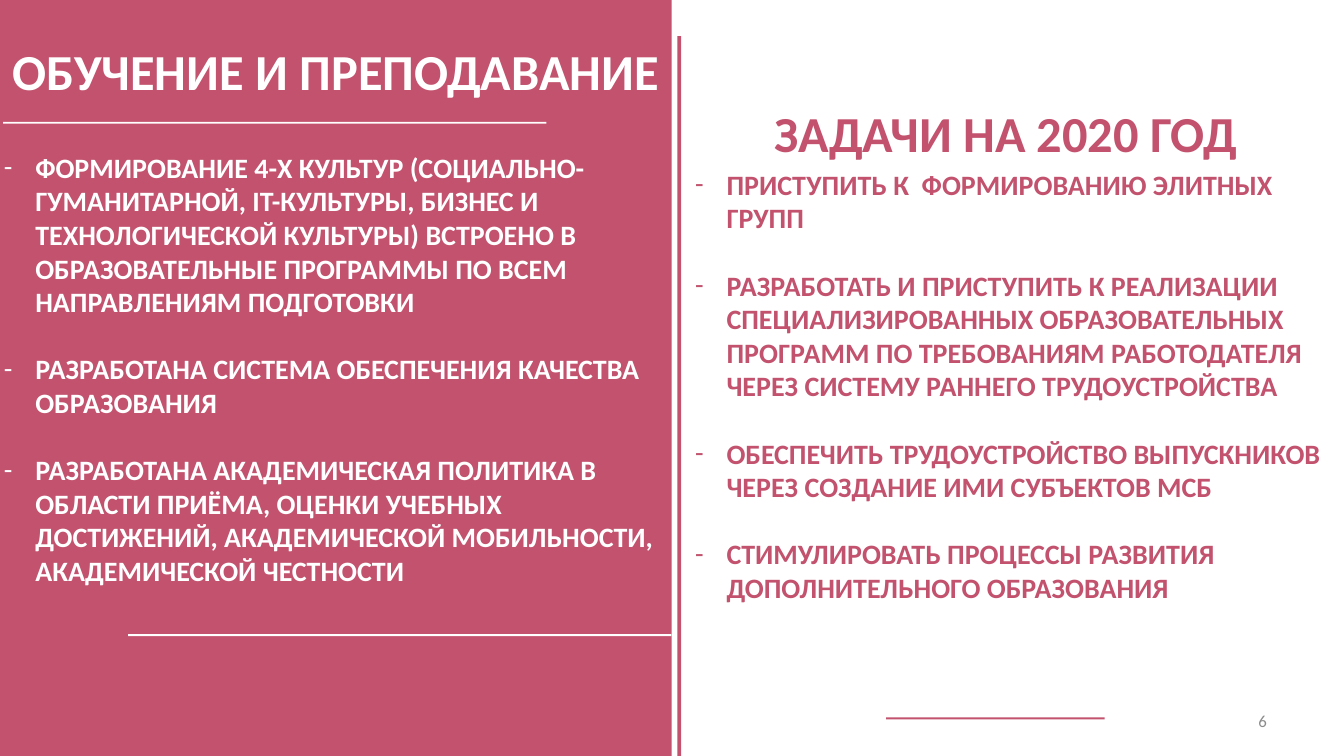
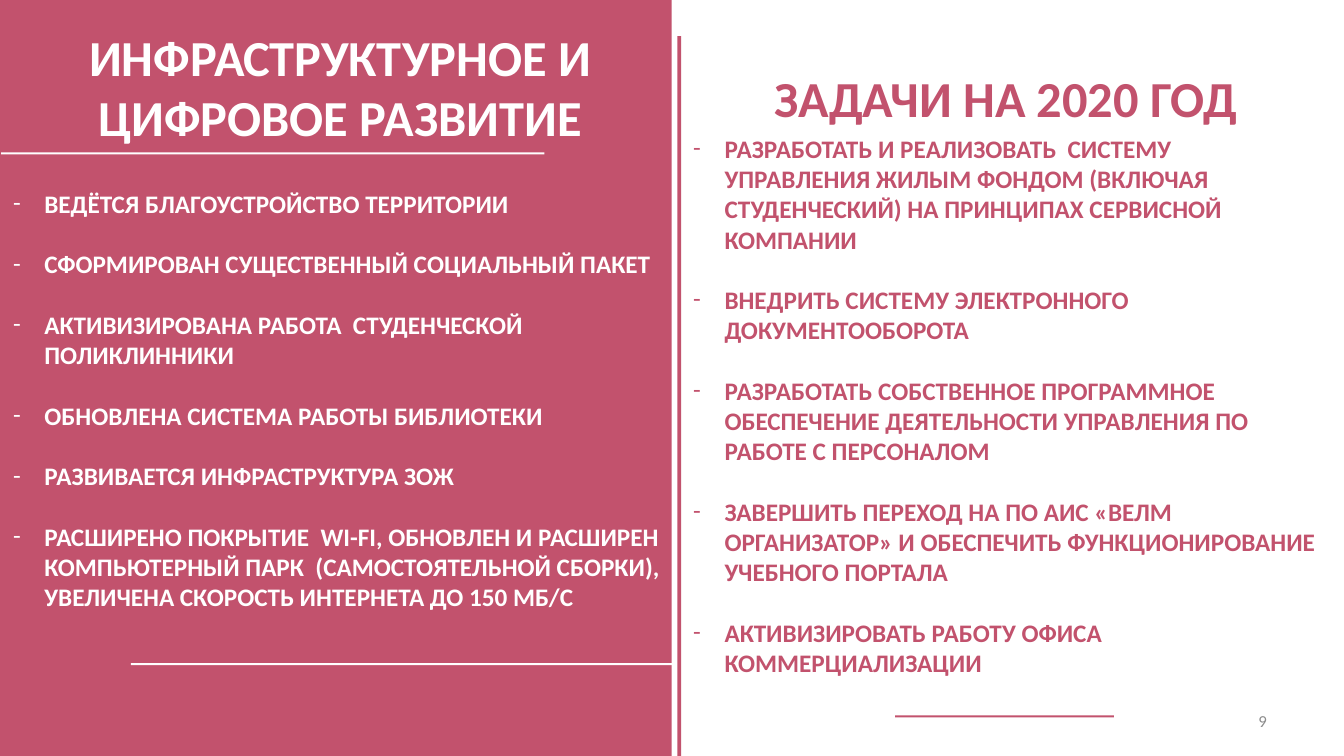
from dataclasses import dataclass

from lxml import etree
from pptx import Presentation
from pptx.dml.color import RGBColor
from pptx.enum.shapes import MSO_SHAPE
from pptx.enum.text import MSO_ANCHOR, MSO_AUTO_SIZE, PP_ALIGN
from pptx.oxml.ns import qn
from pptx.util import Cm, Pt

RECT = MSO_SHAPE.RECTANGLE
LEFT, CENTER, RIGHT = PP_ALIGN.LEFT, PP_ALIGN.CENTER, PP_ALIGN.RIGHT
TOP, MIDDLE = MSO_ANCHOR.TOP, MSO_ANCHOR.MIDDLE
GROW, FIXED = MSO_AUTO_SIZE.SHAPE_TO_FIT_TEXT, MSO_AUTO_SIZE.NONE


@dataclass(frozen=True)
class Theme:
    """Colours, type sizes and shared measures (points and centimetres)."""
    rose: RGBColor = RGBColor(0xC2, 0x52, 0x6D)
    white: RGBColor = RGBColor(0xFF, 0xFF, 0xFF)
    gray: RGBColor = RGBColor(0x8C, 0x8C, 0x8C)
    font: str = "Calibri"
    title: int = 36
    small: int = 12
    lead: float = 1.2
    indent: float = 0.79
    rule: float = 0.05


THEME = Theme()
WIDE, HIGH = 33.87, 19.05
HALF = (0, 0, 16.93, HIGH)
REST = (16.93, 0, 16.94, HIGH)
STRIPE = (17.07, 0.91, 0.1, 18.14)
NUMBER = (24.28, 17.65, 7.9, 1.02)
LONG, SHORT = 13.69, 5.51
GOALS = "ЗАДАЧИ НА 2020 ГОД"

PAGES = [
    {
        "number": "6",
        "size": 20,
        "done": {
            "title": "ОБУЧЕНИЕ И ПРЕПОДАВАНИЕ",
            "head": (-0.05, 0.89, 17.04, 1.8),
            "body": (-0.15, 3.66, 17.02, 11.38),
            "rules": [(0.08, 3.07, LONG), (3.23, 15.98, LONG)],
            "items": [
                "ФОРМИРОВАНИЕ 4-Х КУЛЬТУР (СОЦИАЛЬНО-ГУМАНИТАРНОЙ, IT-КУЛЬТУРЫ, "
                "БИЗНЕС И ТЕХНОЛОГИЧЕСКОЙ КУЛЬТУРЫ) ВСТРОЕНО В ОБРАЗОВАТЕЛЬНЫЕ "
                "ПРОГРАММЫ ПО ВСЕМ НАПРАВЛЕНИЯМ ПОДГОТОВКИ",
                "РАЗРАБОТАНА СИСТЕМА ОБЕСПЕЧЕНИЯ КАЧЕСТВА ОБРАЗОВАНИЯ",
                "РАЗРАБОТАНА АКАДЕМИЧЕСКАЯ ПОЛИТИКА В ОБЛАСТИ ПРИЁМА, ОЦЕНКИ "
                "УЧЕБНЫХ ДОСТИЖЕНИЙ, АКАДЕМИЧЕСКОЙ МОБИЛЬНОСТИ, "
                "АКАДЕМИЧЕСКОЙ ЧЕСТНОСТИ",
            ],
        },
        "plan": {
            "title": GOALS,
            "head": (-0.09, 2.44, 17.04, 1.8),
            "body": (0.34, 4.09, 16.33, 11.38),
            "rules": [(5.4, 18.08, SHORT)],
            "items": [
                "ПРИСТУПИТЬ К  ФОРМИРОВАНИЮ ЭЛИТНЫХ ГРУПП",
                "РАЗРАБОТАТЬ И ПРИСТУПИТЬ К РЕАЛИЗАЦИИ СПЕЦИАЛИЗИРОВАННЫХ "
                "ОБРАЗОВАТЕЛЬНЫХ ПРОГРАММ ПО ТРЕБОВАНИЯМ РАБОТОДАТЕЛЯ "
                "ЧЕРЕЗ СИСТЕМУ РАННЕГО ТРУДОУСТРОЙСТВА",
                "ОБЕСПЕЧИТЬ ТРУДОУСТРОЙСТВО ВЫПУСКНИКОВ "
                "ЧЕРЕЗ СОЗДАНИЕ ИМИ СУБЪЕКТОВ МСБ",
                "СТИМУЛИРОВАТЬ ПРОЦЕССЫ РАЗВИТИЯ ДОПОЛНИТЕЛЬНОГО ОБРАЗОВАНИЯ",
            ],
        },
    },
    {
        "number": "9",
        "size": 18,
        "done": {
            "title": "ИНФРАСТРУКТУРНОЕ И ЦИФРОВОЕ РАЗВИТИЕ",
            "head": (0.53, 0.53, 16.1, 3.33),
            "body": (0.08, 4.62, 17.02, 11.79),
            "rules": [(0.03, 3.84, LONG), (3.3, 16.71, LONG)],
            "items": [
                "ВЕДЁТСЯ БЛАГОУСТРОЙСТВО ТЕРРИТОРИИ",
                "СФОРМИРОВАН СУЩЕСТВЕННЫЙ СОЦИАЛЬНЫЙ ПАКЕТ",
                "АКТИВИЗИРОВАНА РАБОТА  СТУДЕНЧЕСКОЙ ПОЛИКЛИННИКИ",
                "ОБНОВЛЕНА СИСТЕМА РАБОТЫ БИБЛИОТЕКИ",
                "РАЗВИВАЕТСЯ ИНФРАСТРУКТУРА ЗОЖ",
                "РАСШИРЕНО ПОКРЫТИЕ  WI-FI, ОБНОВЛЕН И РАСШИРЕН КОМПЬЮТЕРНЫЙ "
                "ПАРК  (САМОСТОЯТЕЛЬНОЙ СБОРКИ), УВЕЛИЧЕНА СКОРОСТЬ ИНТЕРНЕТА "
                "ДО 150 МБ/С",
            ],
        },
        "plan": {
            "title": GOALS,
            "head": (-0.09, 1.57, 17.04, 1.8),
            "body": (0.29, 3.23, 16.33, 14.1),
            "rules": [(5.63, 18.03, SHORT)],
            "items": [
                "РАЗРАБОТАТЬ И РЕАЛИЗОВАТЬ  СИСТЕМУ УПРАВЛЕНИЯ ЖИЛЫМ ФОНДОМ "
                "(ВКЛЮЧАЯ СТУДЕНЧЕСКИЙ) НА ПРИНЦИПАХ СЕРВИСНОЙ КОМПАНИИ",
                "ВНЕДРИТЬ СИСТЕМУ ЭЛЕКТРОННОГО ДОКУМЕНТООБОРОТА",
                "РАЗРАБОТАТЬ СОБСТВЕННОЕ ПРОГРАММНОЕ ОБЕСПЕЧЕНИЕ ДЕЯТЕЛЬНОСТИ "
                "УПРАВЛЕНИЯ ПО РАБОТЕ С ПЕРСОНАЛОМ",
                "ЗАВЕРШИТЬ ПЕРЕХОД НА ПО АИС «ВЕЛМ ОРГАНИЗАТОР» И ОБЕСПЕЧИТЬ "
                "ФУНКЦИОНИРОВАНИЕ УЧЕБНОГО ПОРТАЛА",
                "АКТИВИЗИРОВАТЬ РАБОТУ ОФИСА КОММЕРЦИАЛИЗАЦИИ",
            ],
        },
    },
]


def shift(box, part):
    """Return the part's box moved by the origin of its region."""
    return (box[0] + part[0], box[1] + part[1], *part[2:])


def fill(slide, box, color):
    """Draw a plain filled rectangle."""
    shape = slide.shapes.add_shape(RECT, *map(Cm, box))
    shape.shadow.inherit = False
    shape.fill.solid()
    shape.fill.fore_color.rgb = color
    shape.line.fill.background()


def frame(slide, box, anchor=TOP, fit=GROW):
    """Add a wrapping text box and return its text frame."""
    text = slide.shapes.add_textbox(*map(Cm, box)).text_frame
    text.word_wrap = True
    text.auto_size = fit
    text.vertical_anchor = anchor
    return text


def write(para, words, size, color, bold=True, align=LEFT):
    """Add one styled run to a paragraph."""
    para.alignment = align
    run = para.add_run()
    run.text = words
    run.font.name = THEME.font
    run.font.size = Pt(size)
    run.font.bold = bold
    run.font.color.rgb = color


def dash(para):
    """Give a paragraph a hanging dash bullet."""
    props = para._p.get_or_add_pPr()
    props.set("marL", str(Cm(THEME.indent)))
    props.set("indent", str(-Cm(THEME.indent)))
    etree.SubElement(props, qn("a:buFont")).set("typeface", THEME.font)
    etree.SubElement(props, qn("a:buChar")).set("char", "-")


def listing(slide, box, items, size, color):
    """Write a dashed list with one line of space between items."""
    text = frame(slide, box)
    for index, item in enumerate(items):
        para = text.add_paragraph() if index else text.paragraphs[0]
        para.space_before = Pt(size * THEME.lead if index else 0)
        dash(para)
        write(para, item, size, color)


def panel(slide, box, part, size, color):
    """Place a title, a list and thin rules inside one half of a slide."""
    head = frame(slide, shift(box, part["head"]))
    write(head.paragraphs[0], part["title"], THEME.title, color, align=CENTER)
    listing(slide, shift(box, part["body"]), part["items"], size, color)
    for rule in part["rules"]:
        fill(slide, shift(box, (*rule, THEME.rule)), color)


def base(slide, number):
    """Draw the shared band and stripe and the page number."""
    fill(slide, HALF, THEME.rose)
    fill(slide, STRIPE, THEME.rose)
    foot = frame(slide, NUMBER, MIDDLE, FIXED)
    write(foot.paragraphs[0], number, THEME.small, THEME.gray, False, RIGHT)


def main():
    """Build and save the presentation."""
    deck = Presentation()
    deck.slide_width, deck.slide_height = Cm(WIDE), Cm(HIGH)
    blank = deck.slide_layouts[6]
    for page in PAGES:
        slide = deck.slides.add_slide(blank)
        base(slide, page["number"])
        panel(slide, HALF, page["done"], page["size"], THEME.white)
        panel(slide, REST, page["plan"], page["size"], THEME.rose)
    deck.save("out.pptx")


if __name__ == "__main__":
    main()
